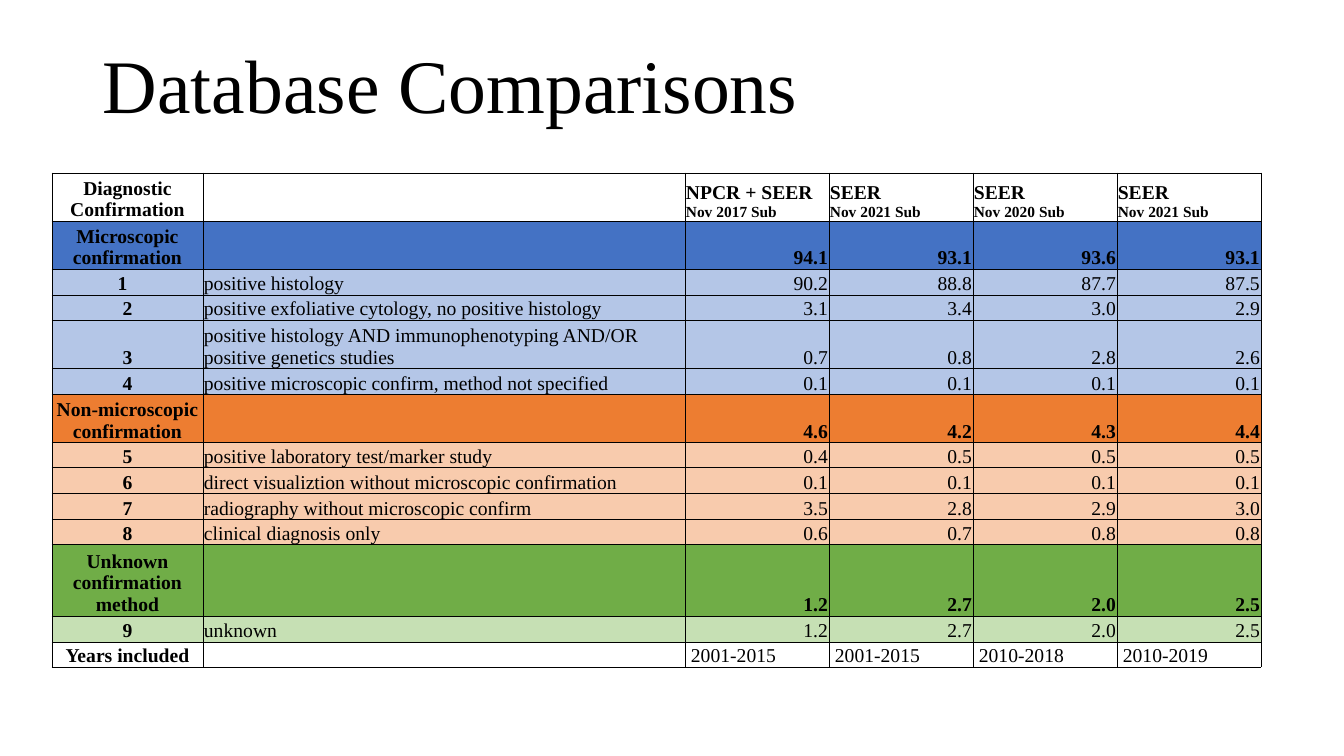
from lxml import etree
from pptx import Presentation
from pptx.dml.color import RGBColor
from pptx.enum.text import MSO_ANCHOR, PP_ALIGN
from pptx.oxml.ns import qn
from pptx.util import Pt

LEFT, CENTER, RIGHT = PP_ALIGN.LEFT, PP_ALIGN.CENTER, PP_ALIGN.RIGHT
BOTTOM = MSO_ANCHOR.BOTTOM
SCALE = 914400 / 100.8  # EMU per px

THEME = {
    "font": "Times New Roman", "ink": "000000",
    "title": 54, "body": 14, "small": 11, "border": 0.5,
    "plain": None,
    "micro": "4472C4", "micro light": "B4C6E7",
    "other": "ED7D31", "other light": "F8CBAD",
    "unknown": "70AD47", "unknown light": "C6E0B4",
}


def px(length):
    return round(length * SCALE)


def style(paragraph, size, bold=False, align=LEFT):
    paragraph.alignment = align
    for run in paragraph.runs:
        run.font.name = THEME["font"]
        run.font.size = Pt(size)
        run.font.bold = bold
        run.font.color.rgb = RGBColor.from_string(THEME["ink"])


prs = Presentation()
prs.slide_width, prs.slide_height = px(1344), px(756)
slide = prs.slides.add_slide(prs.slide_layouts[6])

# Title
title = slide.shapes.add_textbox(px(93), px(32), px(1159), px(103)).text_frame
title.word_wrap = True
title.vertical_anchor = BOTTOM
title.text = "Database Comparisons"
title.paragraphs[0].line_spacing = 0.9
style(title.paragraphs[0], THEME["title"])

# Table content: kind of row, fill, height, cells
ROWS = [
    ("header", "plain", 46, ["Diagnostic Confirmation", "", "NPCR + SEER\nNov 2017 Sub",
                             "SEER\nNov 2021 Sub", "SEER\nNov 2020 Sub", "SEER\nNov 2021 Sub"]),
    ("group", "micro", 45, ["Microscopic confirmation", "", "94.1", "93.1", "93.6", "93.1"]),
    ("code", "micro light", 26, ["1", "positive histology", "90.2", "88.8", "87.7", "87.5"]),
    ("code", "micro light", 25, ["2", "positive exfoliative cytology, no positive histology",
                                 "3.1", "3.4", "3.0", "2.9"]),
    ("code", "micro light", 46, ["3", "positive histology AND immunophenotyping AND/OR "
                                 "positive genetics studies", "0.7", "0.8", "2.8", "2.6"]),
    ("code", "micro light", 26, ["4", "positive microscopic confirm, method not specified",
                                 "0.1", "0.1", "0.1", "0.1"]),
    ("group", "other", 46, ["Non-microscopic confirmation", "", "4.6", "4.2", "4.3", "4.4"]),
    ("code", "other light", 25, ["5", "positive laboratory test/marker study",
                                 "0.4", "0.5", "0.5", "0.5"]),
    ("code", "other light", 26, ["6", "direct visualiztion without microscopic confirmation",
                                 "0.1", "0.1", "0.1", "0.1"]),
    ("code", "other light", 26, ["7", "radiography without microscopic confirm",
                                 "3.5", "2.8", "2.9", "3.0"]),
    ("code", "other light", 25, ["8", "clinical diagnosis only", "0.6", "0.7", "0.8", "0.8"]),
    ("group", "unknown", 66, ["Unknown confirmation method", "", "1.2", "2.7", "2.0", "2.5"]),
    ("code", "unknown light", 26, ["9", "unknown", "1.2", "2.7", "2.0", "2.5"]),
    ("years", "plain", 25, ["Years included", "", "2001-2015", "2001-2015",
                            "2010-2018", "2010-2019"]),
]
COLUMNS = [151, 482] + [144] * 4

# Table frame
table_height = sum(height for _, _, height, _ in ROWS)
comparison = slide.shapes.add_table(len(ROWS), len(COLUMNS), px(52), px(173),
                                    px(sum(COLUMNS)), px(table_height)).table
comparison.first_row = comparison.horz_banding = False
for column, width in zip(comparison.columns, COLUMNS):
    column.width = px(width)

# Table cells
for r, (kind, fill, height, texts) in enumerate(ROWS):
    comparison.rows[r].height = px(height)
    for c, text in enumerate(texts):
        cell = comparison.cell(r, c)
        cell.vertical_anchor = BOTTOM
        cell.margin_left = cell.margin_right = cell.margin_top = px(1)
        cell.margin_bottom = 0
        if kind == "years" and c > 1:
            cell.margin_left = px(6)
        if text == "1":
            cell.margin_right = px(11)

        # Text
        if c == 0:
            align = CENTER
        elif c > 1 and kind in ("group", "code"):
            align = RIGHT
        else:
            align = LEFT
        bold = c == 0 or kind in ("header", "group")
        cell.text_frame.text = text
        for line, paragraph in enumerate(cell.text_frame.paragraphs):
            style(paragraph, THEME["small" if line else "body"], bold, align)
            if not text:
                etree.SubElement(paragraph._p, qn("a:endParaRPr"), sz=str(THEME["body"] * 100))

        # Borders
        properties = cell._tc.get_or_add_tcPr()
        for side in ("a:lnL", "a:lnR", "a:lnT", "a:lnB"):
            border = etree.SubElement(properties, qn(side), w=str(Pt(THEME["border"])))
            border_fill = etree.SubElement(border, qn("a:solidFill"))
            etree.SubElement(border_fill, qn("a:srgbClr"), val=THEME["ink"])

        # Fill
        if THEME[fill]:
            cell.fill.solid()
            cell.fill.fore_color.rgb = RGBColor.from_string(THEME[fill])
        else:
            cell.fill.background()

prs.save("out.pptx")
